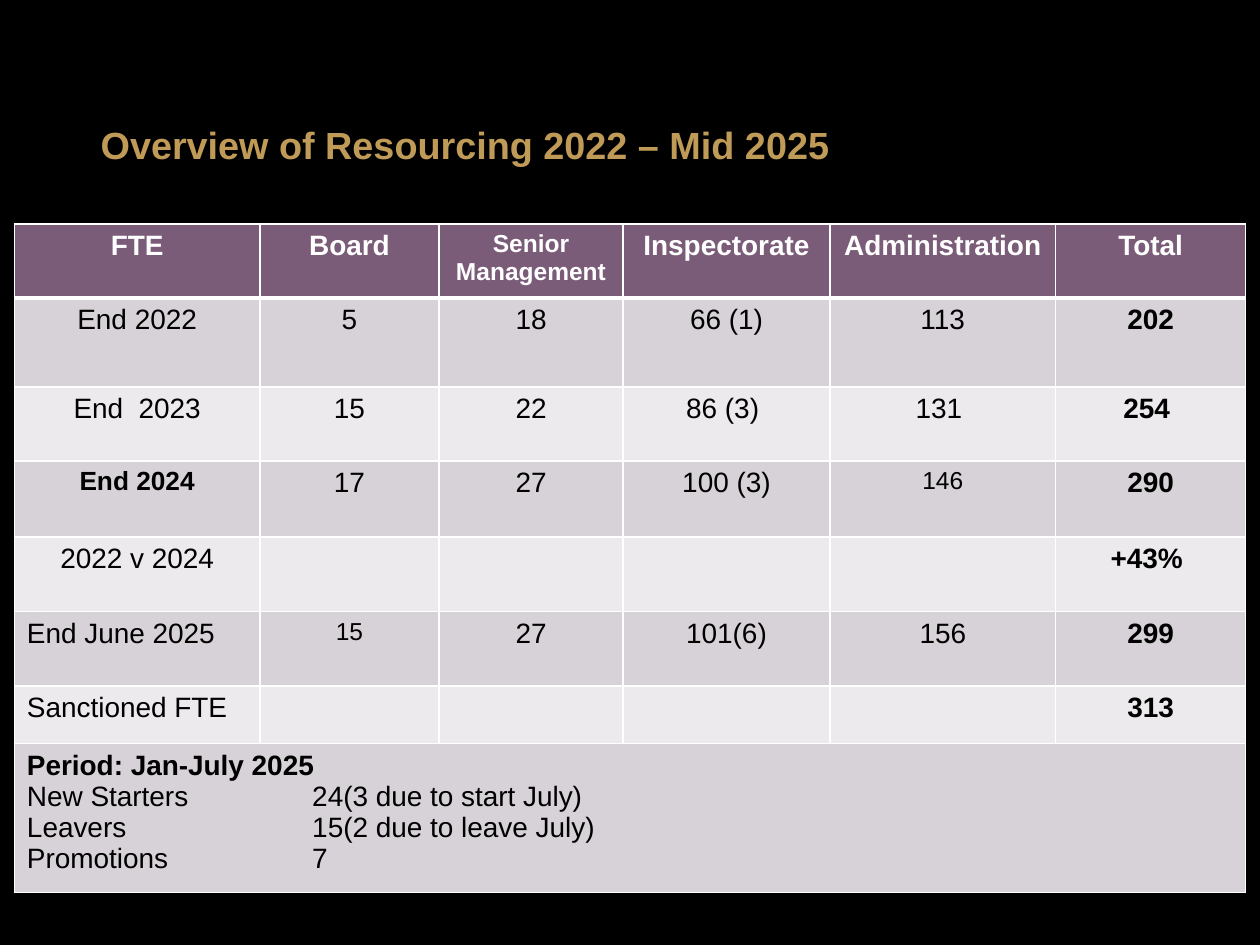
from lxml.etree import SubElement
from pptx import Presentation
from pptx.dml.color import RGBColor
from pptx.enum.text import MSO_ANCHOR as Anchor, PP_ALIGN as Align
from pptx.oxml.ns import qn
from pptx.util import Cm, Pt

BLACK = RGBColor(0x00, 0x00, 0x00)
WHITE = RGBColor(0xFF, 0xFF, 0xFF)
GOLD = RGBColor(0xC0, 0x9B, 0x57)
PLUM = RGBColor(0x7A, 0x5C, 0x79)
BANDS = [RGBColor(0xD7, 0xD2, 0xD7), RGBColor(0xEC, 0xEA, 0xEC)]

COLUMN_WIDTHS = [4.95, 3.61, 3.71, 4.17, 4.55, 3.83]
ROW_HEIGHTS = [1.49, 1.79, 1.49, 1.54, 1.5, 1.5, 1.16, 3.0]
STAFFING = [
    ["FTE", "Board", "Senior Management", "Inspectorate", "Administration", "Total"],
    ["End 2022", "5", "18", "66 (1)", "113", "202"],
    ["End  2023", "15", "22", "86 (3) ", "131 ", "254 "],
    ["End 2024", " 17 ", "27", "100 (3)", "146", "290"],
    ["2022 v 2024", "", "", "", "", "+43% "],
    ["End June 2025", "15", "27", "101(6)", "156", "299"],
    ["Sanctioned FTE", "", "", "", "", "313"],
]
MOVEMENTS = [
    "Period: Jan-July 2025",
    "New Starters\t24(3 due to start July)",
    "Leavers\t15(2 due to leave July)",
    "Promotions\t7",
]
# Cells whose format departs from the rule of their row and column
SIZES = {(0, 2): 14, (3, 0): 15, (3, 4): 14, (5, 1): 14}
BOLD_LABELS = {"End 2024"}
LEFT_LABELS = {"End June 2025", "Sanctioned FTE"}


def write(para, text, size=16, color=BLACK, bold=False, align=Align.LEFT):
    para.alignment = align
    span = para.add_run()
    span.text = text
    span.font.name = "Arial"
    span.font.size = Pt(size)
    span.font.bold = bold
    span.font.color.rgb = color


def add_tab(para, position):
    tabs = SubElement(para._p.get_or_add_pPr(), qn("a:tabLst"))
    SubElement(tabs, qn("a:tab"), pos=str(position), algn="l")


def style_cell(cell, fill, top=1, bottom=1):
    properties = cell._tc.get_or_add_tcPr()
    for side, width in (("L", 1), ("R", 1), ("T", top), ("B", bottom)):
        line = SubElement(properties, qn(f"a:ln{side}"), w=str(Pt(width)))
        solid = SubElement(line, qn("a:solidFill"))
        SubElement(solid, qn("a:srgbClr"), val=str(WHITE))
    cell.fill.solid()
    cell.fill.fore_color.rgb = fill


def add_title(page, text):
    box = page.shapes.add_textbox(Cm(1.78), Cm(2.18), Cm(16.15), Cm(1.4))
    frame = box.text_frame
    frame.word_wrap = True
    frame.vertical_anchor = Anchor.MIDDLE
    para = frame.paragraphs[0]
    para.line_spacing = Pt(28)
    write(para, text, size=21.6, color=GOLD, bold=True)


def add_staffing_table(page):
    rows, columns = len(ROW_HEIGHTS), len(COLUMN_WIDTHS)
    table = page.shapes.add_table(
        rows, columns, Cm(0.29), Cm(4.52),
        Cm(sum(COLUMN_WIDTHS)), Cm(sum(ROW_HEIGHTS))).table
    table.horz_banding = False
    for column, width in zip(table.columns, COLUMN_WIDTHS):
        column.width = Cm(width)
    for row, height in zip(table.rows, ROW_HEIGHTS):
        row.height = Cm(height)

    # Fills and borders, with a heavy rule below the header
    for r in range(rows):
        fill = BANDS[(r - 1) % 2] if r else PLUM
        for c in range(columns):
            style_cell(table.cell(r, c), fill,
                       top=3 if r == 1 else 1, bottom=3 if r == 0 else 1)

    # Header and yearly figures
    for r, values in enumerate(STAFFING):
        for c, text in enumerate(values):
            if text:
                write(table.cell(r, c).text_frame.paragraphs[0], text,
                      size=SIZES.get((r, c), 16),
                      color=BLACK if r else WHITE,
                      bold=r == 0 or c == columns - 1 or text in BOLD_LABELS,
                      align=Align.LEFT if text in LEFT_LABELS else Align.CENTER)

    # Staff movements across the full width
    summary = table.cell(rows - 1, 0)
    summary.merge(table.cell(rows - 1, columns - 1))
    frame = summary.text_frame
    for i, text in enumerate(MOVEMENTS):
        para = frame.add_paragraph() if i else frame.paragraphs[0]
        if "\t" in text:
            add_tab(para, Cm(5.75))
        write(para, text, bold=i == 0)


def main():
    deck = Presentation()
    deck.slide_width, deck.slide_height = Cm(25.4), Cm(19.05)
    page = deck.slides.add_slide(deck.slide_layouts[6])
    page.background.fill.solid()
    page.background.fill.fore_color.rgb = BLACK
    add_title(page, "Overview of Resourcing 2022 – Mid 2025")
    add_staffing_table(page)
    deck.save("out.pptx")


if __name__ == "__main__":
    main()
